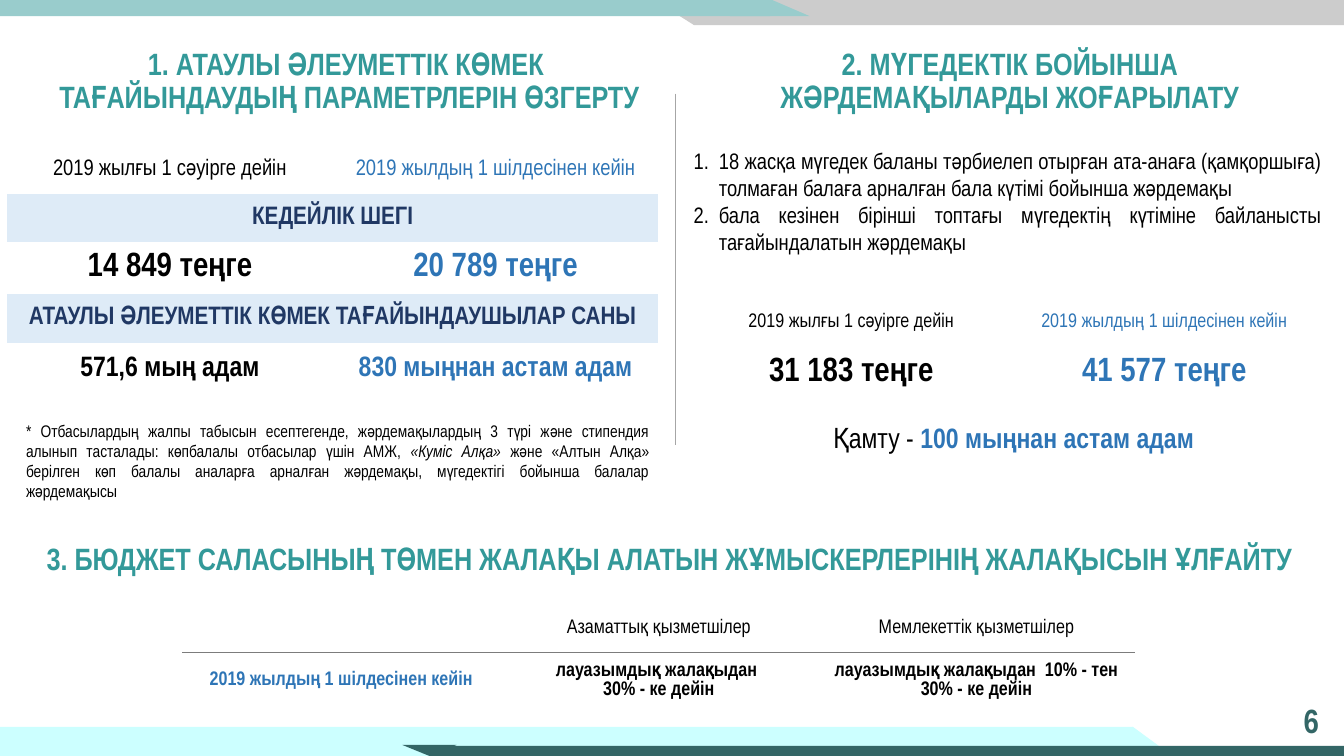
from lxml import etree
from pptx import Presentation
from pptx.dml.color import RGBColor
from pptx.enum.shapes import MSO_CONNECTOR, MSO_SHAPE
from pptx.enum.text import MSO_ANCHOR, MSO_AUTO_SIZE, PP_ALIGN
from pptx.oxml.ns import qn
from pptx.util import Inches, Pt

CENTER, JUSTIFY = PP_ALIGN.CENTER, PP_ALIGN.JUSTIFY
TOP, MIDDLE = MSO_ANCHOR.TOP, MSO_ANCHOR.MIDDLE
NO_AUTOFIT = MSO_AUTO_SIZE.NONE
RECTANGLE, TRIANGLE = MSO_SHAPE.RECTANGLE, MSO_SHAPE.ISOSCELES_TRIANGLE
STRAIGHT = MSO_CONNECTOR.STRAIGHT

FONT = "Arial Narrow"
BLACK, BLUE, NAVY, PALE = "000000", "2E75B6", "203864", "DEEBF7"
TEAL, DARK_TEAL, AQUA, CYAN, GREY = "339999", "336666", "99CCCC", "CCFFFF", "CCCCCC"
DIVIDER, RULE = "A6A6A6", "7C7C7C"
PLAIN_TABLE = "{2D5ABB26-0587-4C30-8999-92F81FD0307C}"
BEFORE, AFTER = "2019 жылғы 1 сәуірге дейін", "2019 жылдың 1 шілдесінен кейін"
HEADING = dict(size=22, color=TEAL, bold=True, spacing=0.9, anchor=MIDDLE)


def rgb(color):
    return RGBColor.from_string(color)


def inches(*lengths):
    return [Inches(length) for length in lengths]


def write(frame, text, size=16, color=BLACK, bold=False, italic=False,
          align=CENTER, spacing=1.0, anchor=TOP, numbered=False):
    frame.word_wrap = True
    frame.vertical_anchor = anchor
    paragraphs = [[(text, {})]] if isinstance(text, str) else text
    for index, runs in enumerate(paragraphs):
        paragraph = frame.add_paragraph() if index else frame.paragraphs[0]
        paragraph.alignment = align
        paragraph.line_spacing = spacing
        paragraph.space_before = Pt(0)
        if numbered:
            properties = paragraph._p.get_or_add_pPr()
            properties.set("marL", str(Inches(0.25)))
            properties.set("indent", str(-Inches(0.25)))
            etree.SubElement(properties, qn("a:buAutoNum"), type="arabicPeriod")
        for words, changes in runs:
            look = dict(color=color, bold=bold, italic=italic) | changes
            for line_index, line in enumerate(words.split("\n")):
                if line_index:
                    paragraph.add_line_break()
                run = paragraph.add_run()
                run.text = line
                run.font.name = FONT
                run.font.size = Pt(size)
                run.font.bold = look["bold"]
                run.font.italic = look["italic"]
                run.font.color.rgb = rgb(look["color"])


def add_text(slide, box, text, **look):
    write(slide.shapes.add_textbox(*inches(*box)).text_frame, text, **look)


def fill_placeholder(placeholder, box, text, **look):
    placeholder.left, placeholder.top, placeholder.width, placeholder.height = inches(*box)
    placeholder.text_frame.auto_size = NO_AUTOFIT
    write(placeholder.text_frame, text, **look)


def add_band(slide, box, color, kind=RECTANGLE, rotation=0):
    band = slide.shapes.add_shape(kind, *inches(*box))
    band.rotation = rotation
    band.shadow.inherit = False
    band.fill.solid()
    band.fill.fore_color.rgb = rgb(color)
    band.line.fill.background()


def add_grid(slide, box, heights, rows):
    left, top, width, _ = box
    columns = max(len(row) for row in rows)
    table = slide.shapes.add_table(
        len(rows), columns, *inches(left, top, width, sum(heights))).table
    table.first_row = table.horz_banding = False
    table._tbl.tblPr.find(qn("a:tableStyleId")).text = PLAIN_TABLE
    for column in table.columns:
        column.width = Inches(width / columns)
    for row_index, (height, row) in enumerate(zip(heights, rows)):
        table.rows[row_index].height = Inches(height)
        banner = len(row) == 1
        if banner:
            table.cell(row_index, 0).merge(table.cell(row_index, columns - 1))
        for column_index, (text, look) in enumerate(row):
            cell = table.cell(row_index, column_index)
            cell.vertical_anchor = MIDDLE
            if banner:
                cell.fill.solid()
                cell.fill.fore_color.rgb = rgb(PALE)
            else:
                cell.fill.background()
            if text:
                write(cell.text_frame, text, anchor=MIDDLE, **look)
    return table


def comparison(before, after, size, bold=True):
    return [(before, dict(size=size, bold=bold)),
            (after, dict(size=size, bold=bold, color=BLUE))]


def banner(text):
    return [(text, dict(size=18, color=NAVY, bold=True))]


def rule_row(table, row_index, side):
    for cell in table.rows[row_index].cells:
        border = etree.Element(qn(side), w=str(Pt(1)))
        fill = etree.SubElement(border, qn("a:solidFill"))
        etree.SubElement(fill, qn("a:srgbClr"), val=RULE)
        cell._tc.get_or_add_tcPr().insert(0, border)


def add_divider(slide, x, top, bottom):
    divider = slide.shapes.add_connector(STRAIGHT, *inches(x, top, x, bottom))
    divider.line.color.rgb = rgb(DIVIDER)
    divider.line.width = Pt(0.5)
    etree.SubElement(divider._element.spPr, qn("a:effectLst"))


def add_decoration(slide, box):
    left, top, width, height = box
    right, bottom = left + width, top + height
    add_band(slide, (right - 6.44, top, 6.44, 0.25), GREY)
    add_band(slide, (left + 6.49, top, 0.79, 0.25), GREY, TRIANGLE, 180)
    add_band(slide, (left, top - 0.01, 7.64, 0.17), AQUA)
    add_band(slide, (left + 7.24, top - 0.01, 0.79, 0.17), AQUA, TRIANGLE)
    add_band(slide, (left, bottom - 0.29, 11.24, 0.29), CYAN)
    add_band(slide, (left + 3.99, bottom - 0.11, 0.54, 0.11), DARK_TEAL, TRIANGLE, 180)
    add_band(slide, (left + 10.84, bottom - 0.29, 0.79, 0.29), CYAN, TRIANGLE)
    add_band(slide, (left + 4.26, bottom - 0.1, width - 4.26, 0.1), DARK_TEAL)


def add_social_aid(slide, box):
    left, top, width, _ = box
    fill_placeholder(
        slide.shapes.title, (left, top, width, 0.93),
        "1. АТАУЛЫ ӘЛЕУМЕТТІК КӨМЕК \nТАҒАЙЫНДАУДЫҢ ПАРАМЕТРЛЕРІН ӨЗГЕРТУ", **HEADING)
    add_grid(slide, (left, top + 1.09, 6.46, 2.48), [0.48, 0.48, 0.52, 0.48, 0.52], [
        comparison(BEFORE, AFTER, 16, bold=False),
        banner("КЕДЕЙЛІК ШЕГІ"),
        comparison("14 849 теңге", "20 789 теңге", 24),
        banner("АТАУЛЫ ӘЛЕУМЕТТІК КӨМЕК ТАҒАЙЫНДАУШЫЛАР САНЫ"),
        comparison("571,6 мың адам", "830 мыңнан астам адам", 20),
    ])
    add_text(slide, (left + 0.09, top + 3.77, 6.38, 0.91), [[
        ("* Отбасылардың жалпы табысын есептегенде, жәрдемақылардың 3 түрі және стипендия "
         "алынып тасталады: көпбалалы отбасылар үшін АМЖ, ", {}),
        ("«Куміс Алқа» ", dict(italic=True)),
        ("және «Алтын Алқа» берілген көп балалы аналарға арналған жәрдемақы, мүгедектігі "
         "бойынша балалар жәрдемақысы", {}),
    ]], size=12, align=JUSTIFY)


def add_disability_benefits(slide, box):
    left, top, width, _ = box
    add_text(slide, (left, top, width, 0.93),
             "2. МҮГЕДЕКТІК БОЙЫНША \nЖӘРДЕМАҚЫЛАРДЫ ЖОҒАРЫЛАТУ ", **HEADING)
    fill_placeholder(slide.placeholders[1], (left, top + 1.06, 6.43, 1.45), [
        [("18 жасқа мүгедек баланы тәрбиелеп отырған ата-анаға (қамқоршыға) толмаған балаға "
          "арналған бала күтімі бойынша жәрдемақы", {})],
        [("бала кезінен бірінші топтағы мүгедектің күтіміне байланысты тағайындалатын "
          "жәрдемақы", {})],
    ], align=JUSTIFY, numbered=True)
    add_grid(slide, (left + 0.11, top + 2.61, 6.21, 1), [0.48, 0.52], [
        comparison(BEFORE, AFTER, 14, bold=False),
        comparison("31 183 теңге", "41 577 теңге", 24),
    ])
    add_text(slide, (left + 0.17, top + 3.77, 6.21, 0.44), [[
        ("Қамту - ", {}), ("100 мыңнан астам адам", dict(color=BLUE, bold=True)),
    ]], size=20)


def add_salary_rise(slide, box):
    left, top, width, _ = box
    add_text(slide, (left, top, width, 0.65),
             "3. БЮДЖЕТ САЛАСЫНЫҢ ТӨМЕН ЖАЛАҚЫ АЛАТЫН ЖҰМЫСКЕРЛЕРІНІҢ ЖАЛАҚЫСЫН ҰЛҒАЙТУ ",
             **HEADING)
    group, rise = dict(size=14), dict(size=14, bold=True)
    salaries = add_grid(slide, (left + 1.8, top + 0.76, 9.45, 1.03), [0.47, 0.56], [
        [("", group), ("Азаматтық қызметшілер", group), ("Мемлекеттік қызметшілер", group)],
        [(AFTER, dict(size=14, bold=True, color=BLUE)),
         ("лауазымдық жалақыдан \n30% - ке дейін", rise),
         ("лауазымдық жалақыдан  10% - тен 30% - ке дейін", rise)],
    ])
    rule_row(salaries, 0, "a:lnB")
    rule_row(salaries, 1, "a:lnT")


def main():
    deck = Presentation()
    deck.slide_width, deck.slide_height = inches(13.33, 7.5)
    slide = deck.slides.add_slide(deck.slide_layouts[1])
    add_decoration(slide, (0, 0, 13.33, 7.5))
    add_social_aid(slide, (0.07, 0.35, 6.79, 4.68))
    add_disability_benefits(slide, (6.78, 0.35, 6.54, 4.21))
    add_salary_rise(slide, (0.01, 5.24, 13.33, 1.79))
    add_divider(slide, 6.7, 0.93, 4.41)
    add_text(slide, (12.67, 6.95, 0.67, 0.44), "6", size=24, color=DARK_TEAL,
             bold=True, spacing=0.9, anchor=MIDDLE)
    deck.save("out.pptx")


if __name__ == "__main__":
    main()
